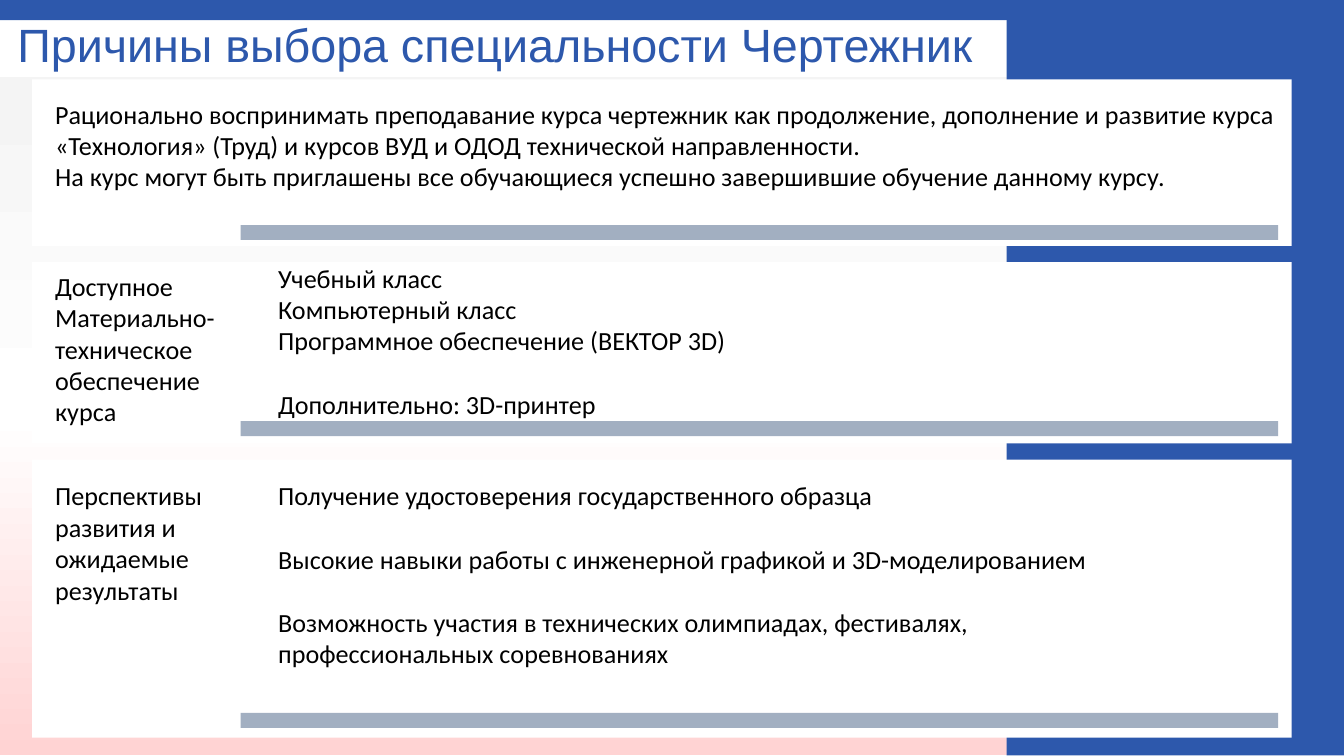
from copy import deepcopy
from lxml import etree
from pptx import Presentation
from pptx.dml.color import RGBColor
from pptx.enum.shapes import MSO_CONNECTOR, MSO_SHAPE
from pptx.enum.text import MSO_ANCHOR
from pptx.oxml.ns import qn
from pptx.util import Inches, Pt

RECT = MSO_SHAPE.RECTANGLE
STRAIGHT = MSO_CONNECTOR.STRAIGHT
MIDDLE = MSO_ANCHOR.MIDDLE
BLUE = "2D58AC"
WHITE = "FFFFFF"


def rgb(value):
    return RGBColor.from_string(value)


def add_text(box, lines, font, size, color, margins=(0, 0)):
    sp = s.shapes.add_textbox(*[Inches(v) for v in box])
    tf = sp.text_frame
    tf.word_wrap = True
    tf.margin_left = tf.margin_right = Inches(margins[0])
    tf.margin_top = tf.margin_bottom = Inches(margins[1])
    for i, (text, gap) in enumerate(lines):
        p = tf.paragraphs[0] if i == 0 else tf.add_paragraph()
        p.text = text
        p.space_before = Pt(gap)
        p.font.name = font
        p.font.size = Pt(size)
        p.font.color.rgb = rgb(color)
    return tf


prs = Presentation()
prs.slide_width = Inches(10)
prs.slide_height = Inches(10) * 9 // 16
s = prs.slides.add_slide(prs.slide_layouts[6])

panels = [
    ((0, 0.57, 8.4, 5.05), None),
    ((7.49, 0, 2.51, 5.62), BLUE),
    ((0.24, 3.42, 9.37, 2.07), WHITE),
    ((0.24, 1.95, 9.37, 1.35), WHITE),
    ((0.24, 0.59, 9.37, 1.24), WHITE),
    ((0, 0, 10, 0.15), BLUE),
]
for box, color in panels:
    sp = s.shapes.add_shape(RECT, *[Inches(v) for v in box])
    sp.shadow.inherit = False
    sp.line.fill.background()
    if color:
        sp.fill.solid()
        sp.fill.fore_color.rgb = rgb(color)
    else:
        sp.fill.gradient()
        sp.fill.gradient_angle = 270
        stops = sp._element.spPr.find(qn("a:gradFill")).find(qn("a:gsLst"))
        stops.insert(1, deepcopy(stops[0]))
        gradient = [(0, "F4F4F4"), (0.5, WHITE), (1, "FFD3D3")]
        for stop, (position, shade) in zip(sp.fill.gradient_stops, gradient):
            stop.position = position
            stop.color.rgb = rgb(shade)

GAP = 17
texts = [
    ((0.41, 0.73, 9.11, 1.2), [
        ("Рационально воспринимать преподавание курса чертежник как продолжение, "
         "дополнение и развитие курса «Технология» (Труд) и курсов ВУД и ОДОД "
         "технической направленности.", 0),
        ("На курс могут быть приглашены все обучающиеся успешно завершившие "
         "обучение данному курсу.", 0),
    ]),
    ((2.07, 1.95, 6.07, 1.18), [
        ("Учебный класс", 0),
        ("Компьютерный класс", 0),
        ("Программное обеспечение (ВЕКТОР 3D)", 0),
        ("Дополнительно: 3D-принтер", GAP),
    ]),
    ((2.07, 3.57, 6.07, 1.41), [
        ("Получение удостоверения государственного образца", 0),
        ("Высокие навыки работы с инженерной графикой и 3D-моделированием", GAP),
        ("Возможность участия в технических олимпиадах, фестивалях, "
         "профессиональных соревнованиях", GAP),
    ]),
    ((0.41, 2.01, 1.19, 1.18),
     [("Доступное Материально-техническое обеспечение курса", 0)]),
    ((0.41, 3.57, 1.19, 0.94),
     [("Перспективы развития и ожидаемые результаты", 0)]),
]
for box, lines in texts:
    add_text(box, lines, "Calibri", 14, "000000")

for y in (1.73, 3.19, 5.36):
    line = s.shapes.add_connector(
        STRAIGHT, Inches(1.79), Inches(y), Inches(9.51), Inches(y))
    line.line.width = Pt(8)
    line.line.color.rgb = rgb("2D4B72")
    spPr = line._element.spPr
    color = next(spPr.iter(qn("a:srgbClr")))
    etree.SubElement(color, qn("a:alpha")).set("val", "44000")
    etree.SubElement(spPr, qn("a:effectLst"))

tf = add_text((0.06, 0.07, 8.62, 0.57),
              [("Причины выбора специальности Чертежник", 0)],
              "Arial", 25, BLUE, (0.07, 0.04))
tf.vertical_anchor = MIDDLE
tf.paragraphs[0].line_spacing = 0.9

prs.save("out.pptx")
